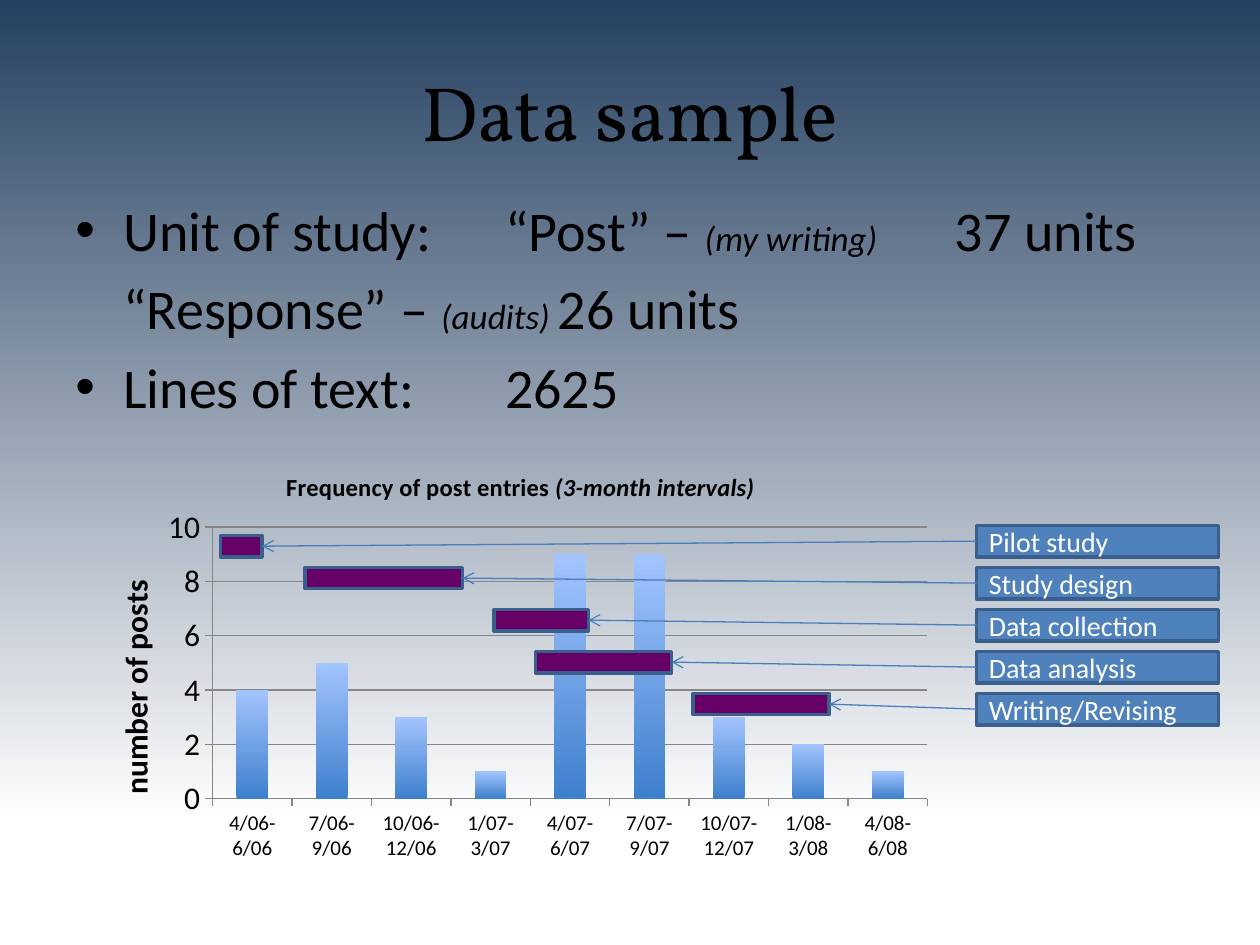
from lxml import etree
from pptx import Presentation
from pptx import util as u
from pptx.chart.data import CategoryChartData
from pptx.dml.color import RGBColor
from pptx.enum import chart as ch, shapes, text
from pptx.oxml.ns import qn

COLORS = {
    "text": "000000", "label_text": "FFFFFF", "label": "4F81BD", "border": "3A5F8C",
    "phase": "660066", "arrow": "4B7EBC", "grid": "868686",
    "sky_low": "FFFFFF", "sky_high": "254061",
    "column_low": "3F80CD", "column_high": "A3C4FF",
}
FONT, TITLE_FONT = "Calibri", "Vollkorn"

TITLE = "Data sample"
# bulleted?, tab stops in inches, runs of (text, size, italic)
FACTS = [
    (True, (3.41, 6.98), [("Unit of study:\t“Post” – ", 32, False),
                          ("(my writing)\t", 20, True), ("37 units", 32, False)]),
    (False, (3.73,), [("\t“Response” – ", 32, False),
                      ("(audits) ", 20, True), ("26 units", 32, False)]),
    (True, (3.41,), [("Lines of text:\t2625", 32, False)]),
]
CHART_TITLE = [("Frequency of post entries ", False), ("(3-month intervals)", True)]
AXIS_TITLE = "number of posts"
POSTS = {
    "4/06-6/06": 4, "7/06-9/06": 5, "10/06-12/06": 3, "1/07-3/07": 1, "4/07-6/07": 9,
    "7/07-9/07": 9, "10/07-12/07": 3, "1/08-3/08": 2, "4/08-6/08": 1,
}
# name, left and right end of the phase bar in inches
PHASES = [
    ("Pilot study", 1.75, 2.08), ("Study design", 2.42, 3.67),
    ("Data collection", 3.92, 4.67), ("Data analysis", 4.25, 5.33),
    ("Writing/Revising", 5.5, 6.58),
]
ROW_TOP, ROW_STEP = 4.17, 1 / 3
LABEL_LEFT, LABEL_WIDTH, LABEL_HEIGHT = 7.75, 1.92, 0.25
BAR_HEIGHT, FIRST_BAR_DROP = 0.17, 0.08
INDENT = 0.38


def rgb(name):
    return RGBColor.from_string(COLORS[name])


def box(left, top, width, height):
    return [u.Inches(v) for v in (left, top, width, height)]


def style(font, size, color="text", italic=False, bold=False, name=FONT):
    font.name, font.size, font.italic, font.bold = name, u.Pt(size), italic, bold
    font.color.rgb = rgb(color)


def add_run(paragraph, words, size, **look):
    run = paragraph.add_run()
    run.text = words
    style(run.font, size, **look)


def fade_up(fill, low, high, low_position=0):
    """Gradient rising from the low colour to the high one."""
    fill.gradient()
    fill.gradient_angle = 90
    for stop, color, position in zip(fill.gradient_stops, (low, high), (low_position, 1)):
        stop.color.rgb = rgb(color)
        stop.position = position


def place_in_chart(part, **shares):
    """Manual layout of a chart part, as shares of the chart's size."""
    layout = part.find(qn("c:layout"))
    if layout is None:
        layout = etree.Element(qn("c:layout"))
        part.insert(0, layout)
    manual = etree.SubElement(layout, qn("c:manualLayout"))
    if "w" in shares:
        etree.SubElement(manual, qn("c:layoutTarget"), val="inner")
    for mode in ("xMode", "yMode"):
        etree.SubElement(manual, qn("c:" + mode), val="edge")
    for key, share in shares.items():
        etree.SubElement(manual, qn("c:" + key), val=str(share))


def add_title(slide):
    title = slide.shapes.title
    title.left, title.top, title.width, title.height = box(0.5, 0.25, 9, 1.25)
    title.text_frame.vertical_anchor = text.MSO_ANCHOR.MIDDLE
    paragraph = title.text_frame.paragraphs[0]
    paragraph.alignment = text.PP_ALIGN.CENTER
    add_run(paragraph, TITLE, 44, name=TITLE_FONT)


def add_facts(slide):
    frame = slide.shapes.add_textbox(*box(0.5, 1.5, 9.02, 5.46)).text_frame
    frame.word_wrap = True
    for i, (bulleted, stops, runs) in enumerate(FACTS):
        paragraph = frame.add_paragraph() if i else frame.paragraphs[0]
        props = paragraph._p.get_or_add_pPr()
        props.set("marL", str(u.Inches(INDENT)))
        props.set("indent", str(-u.Inches(INDENT)))
        if bulleted:
            etree.SubElement(props, qn("a:buFont"), typeface="Arial")
            etree.SubElement(props, qn("a:buChar"), char="•")
        else:
            etree.SubElement(props, qn("a:buNone"))
        tabs = etree.SubElement(props, qn("a:tabLst"))
        for stop in stops:
            etree.SubElement(tabs, qn("a:tab"), pos=str(u.Inches(stop)), algn="l")
        if i:
            paragraph.space_before = u.Pt(6.4)
        for words, size, italic in runs:
            add_run(paragraph, words, size, italic=italic)


def add_post_chart(slide):
    data = CategoryChartData()
    data.categories = list(POSTS)
    data.add_series("Series 1", list(POSTS.values()))
    chart = slide.shapes.add_chart(
        ch.XL_CHART_TYPE.COLUMN_CLUSTERED, *box(0.58, 3.5, 6.92, 3.42), data).chart
    style(chart.font, 18)
    chart.has_legend = False

    heading = chart.chart_title
    for words, italic in CHART_TITLE:
        add_run(heading.text_frame.paragraphs[0], words, 14, italic=italic, bold=True)
    place_in_chart(heading._element, x=0.24, y=0.06)

    months, count = chart.category_axis, chart.value_axis
    style(months.tick_labels.font, 12)
    style(count.tick_labels.font, 18)
    count.minimum_scale, count.maximum_scale, count.major_unit = 0, 10, 2
    add_run(count.axis_title.text_frame.paragraphs[0], AXIS_TITLE, 18, bold=True)
    place_in_chart(count.axis_title._element, x=0.04, y=0.31)
    for line in (months.format.line, count.format.line, count.major_gridlines.format.line):
        line.color.rgb = rgb("grid")
        line.width = u.Pt(0.75)

    plot = chart.plots[0]
    plot.gap_width = 150
    plot.vary_by_categories = False
    fade_up(plot.series[0].format.fill, "column_low", "column_high")
    place_in_chart(chart._chartSpace.chart.plotArea, x=0.16, y=0.2, w=0.82, h=0.63)


def add_block(slide, fill, *place):
    block = slide.shapes.add_shape(shapes.MSO_SHAPE.RECTANGLE, *box(*place))
    block.shadow.inherit = False
    block.fill.solid()
    block.fill.fore_color.rgb = rgb(fill)
    block.line.color.rgb = rgb("border")
    block.line.width = u.Pt(2)
    return block


def add_phase(slide, row, name, start, end):
    top = ROW_TOP + row * ROW_STEP
    label = add_block(slide, "label", LABEL_LEFT, top, LABEL_WIDTH, LABEL_HEIGHT)
    label.text_frame.vertical_anchor = text.MSO_ANCHOR.MIDDLE
    paragraph = label.text_frame.paragraphs[0]
    paragraph.alignment = text.PP_ALIGN.LEFT
    add_run(paragraph, name, 16, color="label_text")

    bar_top = top if row else top + FIRST_BAR_DROP
    bar = add_block(slide, "phase", start, bar_top, end - start, BAR_HEIGHT)

    arrow = slide.shapes.add_connector(shapes.MSO_CONNECTOR.STRAIGHT, 0, 0, 0, 0)
    arrow.begin_connect(label, 1)
    arrow.end_connect(bar, 3)
    arrow.line.color.rgb = rgb("arrow")
    arrow.line.width = u.Pt(0.75)
    etree.SubElement(arrow.line._get_or_add_ln(), qn("a:tailEnd"), type="arrow")
    etree.SubElement(arrow._element.spPr, qn("a:effectLst"))


def main():
    deck = Presentation()
    deck.slide_width, deck.slide_height = u.Inches(10), u.Inches(7.5)
    slide = deck.slides.add_slide(deck.slide_layouts[5])
    fade_up(slide.background.fill, "sky_low", "sky_high", 0.13)
    add_title(slide)
    add_facts(slide)
    add_post_chart(slide)
    for row, phase in enumerate(PHASES):
        add_phase(slide, row, *phase)
    deck.save("out.pptx")


if __name__ == "__main__":
    main()
